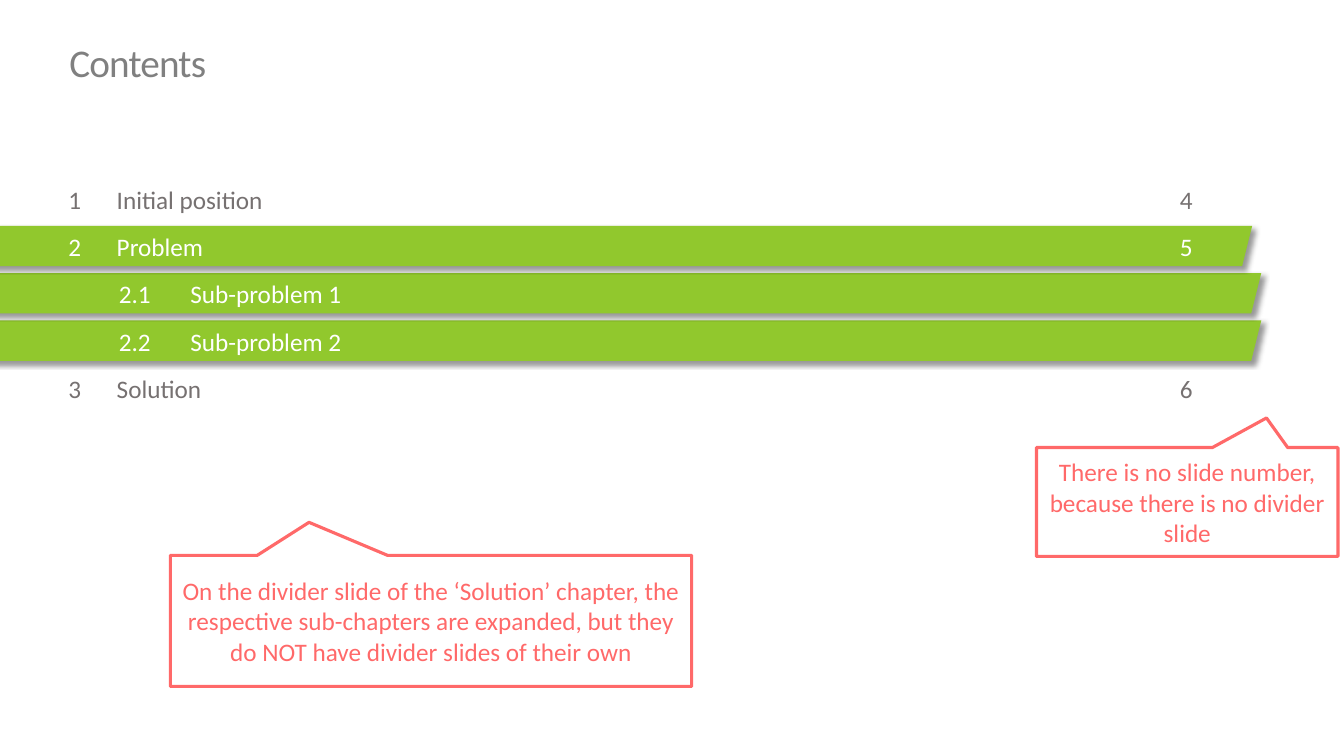
import pptx
import pptx.dml.color
import pptx.enum.shapes
import pptx.enum.text
import pptx.oxml
import pptx.oxml.ns
import pptx.util
from pptx.util import Inches

GREEN, GREY, WHITE, CORAL, TITLE_GREY = "91C82D", "767171", "FFFFFF", "FF6969", "808080"
LEFT, CENTER = pptx.enum.text.PP_ALIGN.LEFT, pptx.enum.text.PP_ALIGN.CENTER
SHAPES = pptx.enum.shapes.MSO_SHAPE

FIRST_ROW_TOP, ROW_HEIGHT = 1.74, 0.47
BAR_LEFT, BAR_HEIGHT, BAR_OFFSET = -0.15, 0.4, 0.03

# Left and width of the number and heading columns, by outline level
COLUMNS = {1: ((0.58, 0.43), (1.06, 6.24)), 2: ((1.08, 0.61), (1.79, 5.52))}
PAGE_COLUMN = (11.42, 0.69)

# Level, number, heading, page, width of the highlight bar
CHAPTERS = [
    (1, "1", "Initial position", "4", None),
    (1, "2", "Problem", "5", 12.57),
    (2, "2.1", "Sub-problem 1", None, 12.66),
    (2, "2.2", "Sub-problem 2", None, 12.66),
    (1, "3", "Solution", "6", None),
]

# Box and pointer position of each remark
REMARKS = [
    ("On the divider slide of the ‘Solution’ chapter, the respective sub-chapters "
     "are expanded, but they do NOT have divider slides of their own",
     (1.69, 5.51, 5.17, 1.3), (-0.234, -0.752)),
    ("There is no slide number, because there is no divider slide",
     (10.28, 4.44, 2.99, 1.08), (0.263, -0.772)),
]

SHADOW_XML = (
    f'<a:effectLst {pptx.oxml.ns.nsdecls("a")}>'
    '<a:outerShdw blurRad="50800" dist="38100" dir="2700000" algn="tl" rotWithShape="0">'
    '<a:srgbClr val="000000"><a:alpha val="40000"/></a:srgbClr>'
    '</a:outerShdw></a:effectLst>'
)


def rgb(hex_code):
    return pptx.dml.color.RGBColor.from_string(hex_code)


def apply_format(target, values):
    for attribute, value in values.items():
        setattr(target, attribute, value)


def write_text(shape, text, color, align=LEFT, size=18):
    """Fill a shape with one wrapped, vertically centred paragraph and return it."""
    frame = shape.text_frame
    apply_format(frame, {"word_wrap": True,
                         "vertical_anchor": pptx.enum.text.MSO_ANCHOR.MIDDLE})
    paragraph = frame.paragraphs[0]
    paragraph.alignment = align
    run = paragraph.add_run()
    run.text = text
    apply_format(run.font, {"name": "Calibri", "size": pptx.util.Pt(size)})
    run.font.color.rgb = rgb(color)
    return paragraph


def add_label(slide, text, box, color, **text_format):
    label = slide.shapes.add_textbox(*map(Inches, box))
    return write_text(label, text, color, **text_format)


def add_title(slide, text):
    paragraph = add_label(slide, text, (0.59, 0.18, 11.64, 0.93), TITLE_GREY, size=28)
    paragraph.line_spacing = 0.9
    paragraph.runs[0].font._element.set("spc", "-60")


def add_bar(slide, top, width):
    bar = slide.shapes.add_shape(
        SHAPES.PARALLELOGRAM, *map(Inches, (BAR_LEFT, top, width, BAR_HEIGHT)))
    bar.fill.solid()
    bar.fill.fore_color.rgb = rgb(GREEN)
    bar.line.fill.background()
    bar._element.spPr.append(pptx.oxml.parse_xml(SHADOW_XML))


def add_chapter(slide, top, level, number, heading, page, bar_width):
    if bar_width:
        add_bar(slide, top + BAR_OFFSET, bar_width)
    color = WHITE if bar_width else GREY
    for text, (left, width) in zip((number, heading), COLUMNS[level]):
        add_label(slide, text, (left, top, width, ROW_HEIGHT), color)
    if page:
        left, width = PAGE_COLUMN
        add_label(slide, page, (left, top, width, ROW_HEIGHT), color, align=CENTER)


def add_remark(slide, text, box, pointer):
    callout = slide.shapes.add_shape(SHAPES.RECTANGULAR_CALLOUT, *map(Inches, box))
    callout.shadow.inherit = False
    callout.adjustments[0], callout.adjustments[1] = pointer
    callout.fill.background()
    callout.line.color.rgb = rgb(CORAL)
    callout.line.width = pptx.util.Pt(2.25)
    write_text(callout, text, CORAL, align=CENTER)


def main():
    deck = pptx.Presentation()
    apply_format(deck, {"slide_width": Inches(13.33), "slide_height": Inches(7.5)})
    slide = deck.slides.add_slide(deck.slide_layouts[6])
    # Lower rows go in first, so each bar lies over the one below it
    for row, chapter in reversed(list(enumerate(CHAPTERS))):
        add_chapter(slide, FIRST_ROW_TOP + row * ROW_HEIGHT, *chapter)
    add_title(slide, "Contents")
    for remark in REMARKS:
        add_remark(slide, *remark)
    deck.save("out.pptx")


if __name__ == "__main__":
    main()
